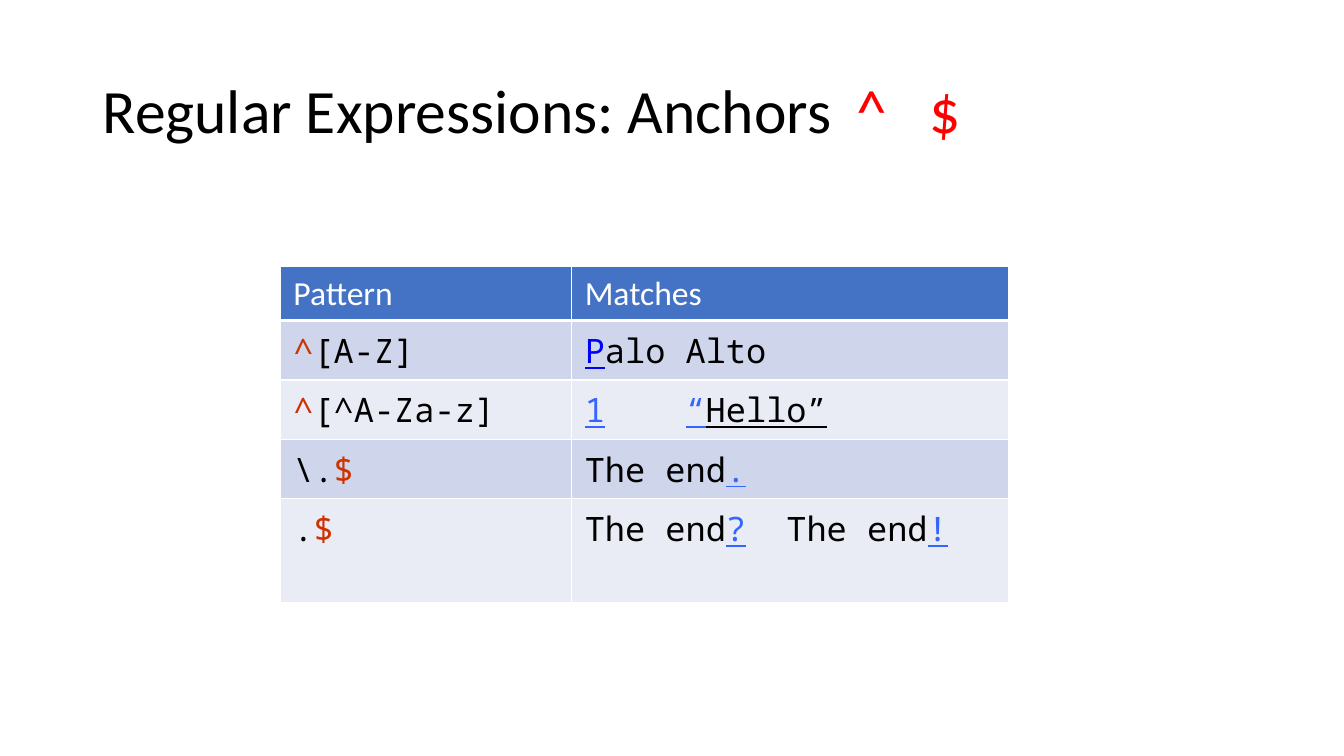
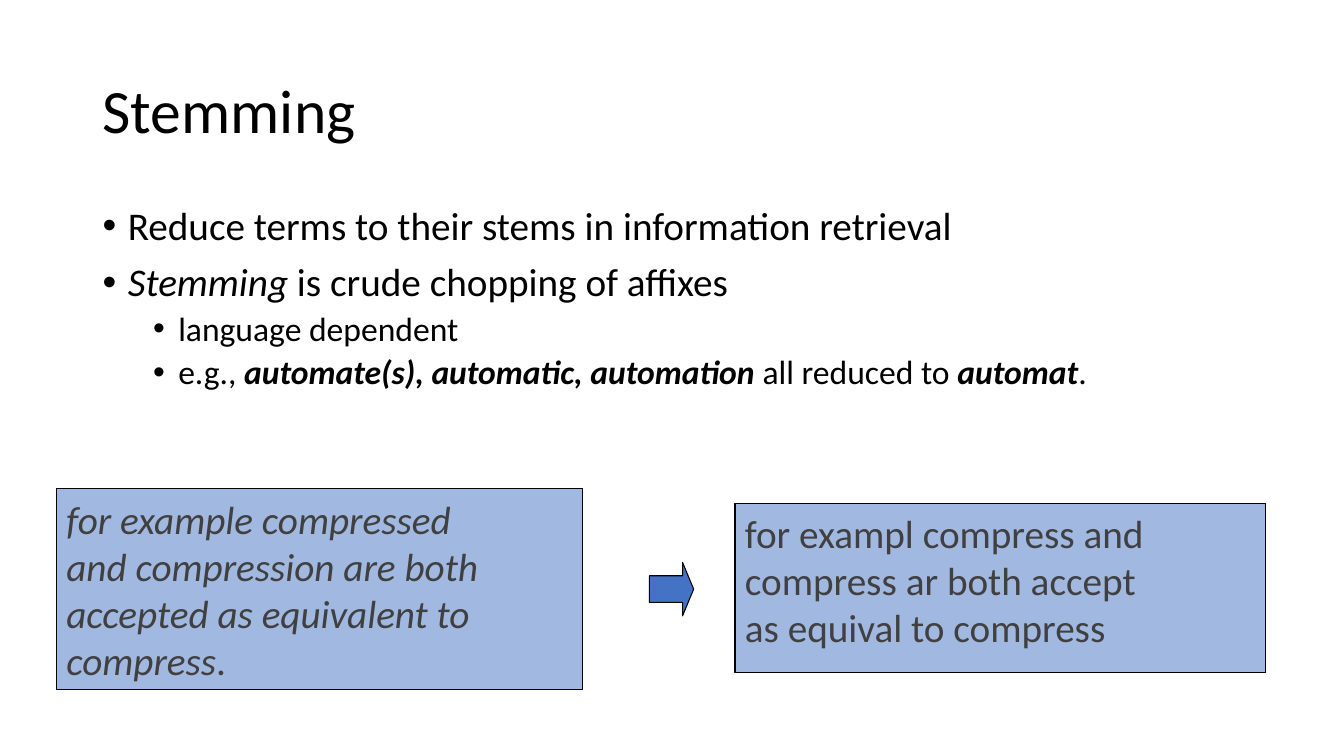
import pptx
import pptx.dml.color
import pptx.enum.shapes
import pptx.enum.text
import pptx.oxml
import pptx.oxml.ns
import pptx.util

Inches = pptx.util.Inches
Pt = pptx.util.Pt
RGBColor = pptx.dml.color.RGBColor
SHAPES = pptx.enum.shapes.MSO_SHAPE
ANCHOR = pptx.enum.text.MSO_ANCHOR

BLACK = RGBColor(0x00, 0x00, 0x00)
WHITE = RGBColor(0xFF, 0xFF, 0xFF)
RED = RGBColor(0xFF, 0x00, 0x00)
BLUE = RGBColor(0x44, 0x72, 0xC4)
BAND_DARK = RGBColor(0xCF, 0xD5, 0xEA)
BAND_LIGHT = RGBColor(0xE9, 0xEB, 0xF5)
ANCHOR_RED = RGBColor(0xCC, 0x33, 0x00)
MATCH_BLUE = RGBColor(0x33, 0x66, 0xFF)
FIRST_MATCH_BLUE = RGBColor(0x00, 0x00, 0xFF)
EXAMPLE_GRAY = RGBColor(0x40, 0x40, 0x40)

SANS = "Calibri"
MONO = "Noto Sans Mono"

META = {"color": ANCHOR_RED}
MATCH = {"color": MATCH_BLUE, "underline": True}
STRONG = {"bold": True, "italic": True}
ITALIC = {"italic": True}

# Each cell is a list of runs: (text, format).
PATTERN_ROWS = [
    ([("^", META), ("[A-Z]", {})],
     [("P", {"color": FIRST_MATCH_BLUE, "underline": True}), ("alo Alto", {})]),
    ([("^", META), ("[^A-Za-z]", {})],
     [("1", MATCH), ("\t", {}), ("“", MATCH), ("Hello”", {"underline": True})]),
    ([("\\.", {}), ("$", META)],
     [("The end", {}), (".", MATCH)]),
    ([(".", {}), ("$", META)],
     [("The end", {}), ("?", MATCH), ("\t", {}), ("The end", {}), ("!", MATCH)]),
]
COLUMN_WIDTHS = [2.89, 4.33]
ROW_HEIGHTS = [0.54, 0.59, 0.59, 0.59, 1.03]
MATCH_TABS = [1, 2]

# Each bullet is its level and its runs.
BULLETS = [
    (0, [("Reduce terms to their stems in information retrieval", {})]),
    (0, [("Stemming", ITALIC), (" is crude chopping of affixes", {})]),
    (1, [("language dependent", {})]),
    (1, [("e.g., ", {}), ("automate(s), automatic, automation", STRONG),
         (" all reduced to ", {}), ("automat", STRONG), (".", {})]),
]
BULLET_SIZES = [28, 24]
BULLET_SPACING = [10, 5]

BEFORE_STEMMING = [
    [("for example compressed", ITALIC)],
    [("and compression are both", ITALIC)],
    [("accepted as equivalent to", ITALIC)],
    [("compress", ITALIC), (".", {})],
]
AFTER_STEMMING = [
    [("for exampl compress and", {})],
    [("compress ar both accept", {})],
    [("as equival to compress", {})],
]


def append_xml(parent, tag, attributes=""):
    namespace = pptx.oxml.ns.nsdecls("a")
    element = pptx.oxml.parse_xml(f"<a:{tag} {namespace} {attributes}/>")
    parent.append(element)
    return element


def add_run(paragraph, text, font=SANS, size=28, color=BLACK,
            bold=False, italic=False, underline=False):
    run = paragraph.add_run()
    run.text = text
    run.font.name = font
    run.font.size = Pt(size)
    run.font.color.rgb = color
    run.font.bold = bold
    run.font.italic = italic
    run.font.underline = underline


def add_runs(paragraph, runs, **defaults):
    """Add (text, format) runs; each format overrides the defaults."""
    for text, run_format in runs:
        add_run(paragraph, text, **{**defaults, **run_format})


def paragraphs_for(text_frame, items):
    """Pair each item with its own paragraph of the frame."""
    for index, item in enumerate(items):
        first = index == 0
        yield (text_frame.paragraphs[0] if first
               else text_frame.add_paragraph()), item


def set_tabs(paragraph, positions):
    tab_list = append_xml(paragraph._p.get_or_add_pPr(), "tabLst")
    for position in positions:
        append_xml(tab_list, "tab", f'pos="{Inches(position)}" algn="l"')


def add_text_box(slide, left, top, width, height, anchor=ANCHOR.TOP):
    box = slide.shapes.add_textbox(
        Inches(left), Inches(top), Inches(width), Inches(height))
    box.text_frame.word_wrap = True
    box.text_frame.vertical_anchor = anchor
    return box.text_frame


def add_title(slide, runs, tabs=()):
    text_frame = add_text_box(slide, 0.92, 0.4, 11.5, 1.45, ANCHOR.MIDDLE)
    paragraph = text_frame.paragraphs[0]
    paragraph.line_spacing = 0.9
    if tabs:
        set_tabs(paragraph, tabs)
    add_runs(paragraph, runs, size=44)


def add_bullets(slide, bullets):
    text_frame = add_text_box(slide, 0.92, 2, 11.5, 4.76)
    for paragraph, (level, runs) in paragraphs_for(text_frame, bullets):
        paragraph.level = level
        paragraph.line_spacing = 0.9
        paragraph.space_before = Pt(BULLET_SPACING[level])
        properties = paragraph._p.get_or_add_pPr()
        properties.set("marL", str(Inches(0.25 + 0.5 * level)))
        properties.set("indent", str(Inches(-0.25)))
        append_xml(properties, "buFont", 'typeface="Arial"')
        append_xml(properties, "buChar", 'char="•"')
        add_runs(paragraph, runs, size=BULLET_SIZES[level])


def set_cell_borders(cell, bottom_width):
    properties = cell._tc.get_or_add_tcPr()
    widths = {"lnL": 1, "lnR": 1, "lnT": 1, "lnB": bottom_width}
    for tag, width in widths.items():
        line = append_xml(properties, tag, f'w="{Pt(width)}"')
        fill = append_xml(line, "solidFill")
        append_xml(fill, "srgbClr", f'val="{WHITE}"')


def fill_cell(cell, runs, fill, bottom_width=1, tabs=(), **text_format):
    cell.margin_left = cell.margin_right = Inches(0.13)
    cell.margin_top = cell.margin_bottom = Inches(0.07)
    set_cell_borders(cell, bottom_width)
    cell.fill.solid()
    cell.fill.fore_color.rgb = fill
    paragraph = cell.text_frame.paragraphs[0]
    if tabs:
        set_tabs(paragraph, tabs)
    add_runs(paragraph, runs, size=24, **text_format)


def add_pattern_table(slide):
    table = slide.shapes.add_table(
        len(ROW_HEIGHTS), len(COLUMN_WIDTHS), Inches(2.78), Inches(2.64),
        Inches(sum(COLUMN_WIDTHS)), Inches(sum(ROW_HEIGHTS))).table
    for column, width in zip(table.columns, COLUMN_WIDTHS):
        column.width = Inches(width)
    for row, height in zip(table.rows, ROW_HEIGHTS):
        row.height = Inches(height)
    for index, heading in enumerate(["Pattern", "Matches"]):
        fill_cell(table.cell(0, index), [(heading, {})], BLUE,
                  bottom_width=3, color=WHITE)
    for row_index, (pattern, matches) in enumerate(PATTERN_ROWS, start=1):
        band = BAND_DARK if row_index % 2 else BAND_LIGHT
        fill_cell(table.cell(row_index, 0), pattern, band, font=MONO)
        has_gap = ("\t", {}) in matches
        fill_cell(table.cell(row_index, 1), matches, band, font=MONO,
                  tabs=MATCH_TABS[row_index // 4:] if has_gap else ())


def add_outlined_shape(slide, kind, left, top, width, height, opacity=100):
    shape = slide.shapes.add_shape(
        kind, Inches(left), Inches(top), Inches(width), Inches(height))
    shape.shadow.inherit = False
    shape.fill.solid()
    shape.fill.fore_color.rgb = BLUE
    if opacity < 100:
        color = shape._element.spPr.find(".//" + pptx.oxml.ns.qn("a:srgbClr"))
        append_xml(color, "alpha", f'val="{opacity * 1000}"')
    shape.line.color.rgb = BLACK
    shape.line.width = Pt(0.75)
    return shape


def add_example(slide, lines, left, top, width, height, anchor):
    shape = add_outlined_shape(
        slide, SHAPES.RECTANGLE, left, top, width, height, opacity=50)
    text_frame = shape.text_frame
    text_frame.word_wrap = True
    text_frame.vertical_anchor = anchor
    for paragraph, runs in paragraphs_for(text_frame, lines):
        paragraph.alignment = pptx.enum.text.PP_ALIGN.LEFT
        add_runs(paragraph, runs, color=EXAMPLE_GRAY)


def build_anchors_slide(slide):
    add_title(slide, [("Regular Expressions: Anchors", {}),
                      ("\t^\t$", {"color": RED})], tabs=[7.48, 8.2])
    add_pattern_table(slide)


def build_stemming_slide(slide):
    add_title(slide, [("Stemming", {})])
    add_bullets(slide, BULLETS)
    add_example(slide, BEFORE_STEMMING, 0.56, 4.85, 5.22, 1.99, ANCHOR.MIDDLE)
    add_example(slide, AFTER_STEMMING, 7.29, 5, 5.26, 1.67, ANCHOR.TOP)
    arrow = add_outlined_shape(
        slide, SHAPES.RIGHT_ARROW, 6.44, 5.58, 0.44, 0.53)
    arrow.adjustments[0] = 0.5
    arrow.adjustments[1] = 0.25


def main():
    presentation = pptx.Presentation()
    presentation.slide_width = Inches(13.33)
    presentation.slide_height = Inches(7.5)
    blank_layout = presentation.slide_layouts[6]
    for build_slide in (build_anchors_slide, build_stemming_slide):
        build_slide(presentation.slides.add_slide(blank_layout))
    presentation.save("out.pptx")


if __name__ == "__main__":
    main()
